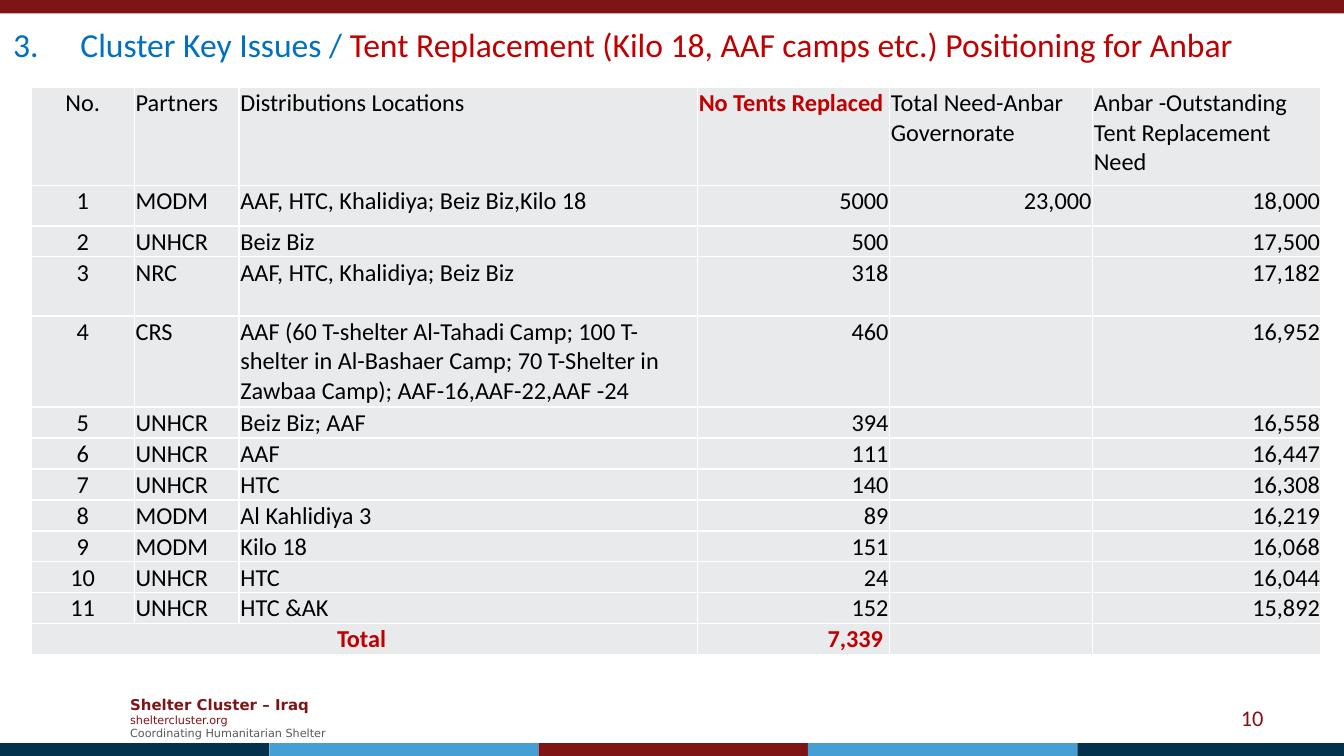
import lxml.etree
import pptx
import pptx.dml.color
import pptx.enum.shapes
import pptx.enum.text
import pptx.oxml
import pptx.oxml.ns
import pptx.util

Inches = pptx.util.Inches
RGBColor = pptx.dml.color.RGBColor
ALIGN = pptx.enum.text.PP_ALIGN
MIDDLE = pptx.enum.text.MSO_ANCHOR.MIDDLE
qn = pptx.oxml.ns.qn

MAROON = RGBColor(0x7F, 0x14, 0x16)
NAVY = RGBColor(0x04, 0x31, 0x4C)
SKY = RGBColor(0x45, 0x9F, 0xD5)
BLUE = RGBColor(0x00, 0x70, 0xC0)
RED = RGBColor(0xC0, 0x00, 0x00)
BLACK = RGBColor(0x00, 0x00, 0x00)
GREY = RGBColor(0x59, 0x59, 0x59)
CELL_GREY = RGBColor(0xE8, 0xEA, 0xEB)
WHITE = RGBColor(0xFF, 0xFF, 0xFF)

BODY_FONT = "Calibri"
FOOTER_FONT = "DejaVu Sans"
CELL_SIZE = 13

HEADERS = ["No.", "Partners", "Distributions Locations", "No Tents Replaced",
           "Total Need-Anbar Governorate", "Anbar -Outstanding Tent Replacement Need"]
DISTRIBUTIONS = [
    ("MODM", "AAF, HTC, Khalidiya; Beiz Biz,Kilo 18", "5000", "23,000", "18,000"),
    ("UNHCR", "Beiz Biz", "500", "", "17,500"),
    ("NRC", "AAF, HTC, Khalidiya; Beiz Biz", "318", "", "17,182"),
    ("CRS", "AAF (60 T-shelter Al-Tahadi Camp; 100 T-shelter in Al-Bashaer Camp; "
            "70 T-Shelter in Zawbaa Camp); AAF-16,AAF-22,AAF -24", "460", "", "16,952"),
    ("UNHCR", "Beiz Biz; AAF", "394", "", "16,558"),
    ("UNHCR", "AAF", "111", "", "16,447"),
    ("UNHCR", "HTC", "140", "", "16,308"),
    ("MODM", "Al Kahlidiya 3", "89", "", "16,219"),
    ("MODM", "Kilo 18", "151", "", "16,068"),
    ("UNHCR", "HTC", "24", "", "16,044"),
    ("UNHCR", "HTC &AK", "152", "", "15,892"),
]
TOTALS = ["Total ", "", "", "7,339 ", "", ""]
COLUMN_WIDTHS = [0.77, 0.78, 3.41, 1.43, 1.51, 1.7]
ROW_HEIGHTS = [0.73, 0.3, 0.23, 0.44, 0.68] + [0.23] * 8


def add_span(para, text, *, size, color, font=BODY_FONT, bold=False):
    """Append formatted text to a paragraph."""
    span = para.add_run()
    span.text = text
    span.font.name = font
    span.font.size = pptx.util.Pt(size)
    span.font.bold = bold
    span.font.color.rgb = color


def add_text_box(page, left, top, width, height):
    """Add a wrapping, vertically centred text box and return its frame."""
    box = page.shapes.add_textbox(Inches(left), Inches(top), Inches(width), Inches(height))
    box.text_frame.word_wrap = True
    box.text_frame.vertical_anchor = MIDDLE
    return box.text_frame


def add_bar(page, left, top, width, height, color):
    """Add a plain coloured bar."""
    bar = page.shapes.add_shape(pptx.enum.shapes.MSO_SHAPE.RECTANGLE,
                                Inches(left), Inches(top), Inches(width), Inches(height))
    bar.shadow.inherit = False
    bar.fill.solid()
    bar.fill.fore_color.rgb = color
    bar.line.fill.background()


def add_stripe(page, left, top, width, height):
    """Add the row of five coloured bars along the bottom edge."""
    colors = [NAVY, SKY, MAROON, SKY, NAVY]
    step = width / len(colors)
    for index, color in enumerate(colors):
        add_bar(page, left + index * step, top, step, height, color)


def add_title(page, left, top, width, height):
    """Add the numbered two-colour title."""
    para = add_text_box(page, left, top, width, height).paragraphs[0]
    properties = para._p.get_or_add_pPr()
    properties.set("marL", str(Inches(0.5)))
    properties.set("indent", str(Inches(-0.5)))
    lxml.etree.SubElement(properties, qn("a:buFont"), typeface="+mj-lt")
    lxml.etree.SubElement(properties, qn("a:buAutoNum"), type="arabicPeriod", startAt="3")
    add_span(para, "Cluster Key Issues / ", size=18, color=BLUE)
    add_span(para, "Tent Replacement (Kilo 18, AAF camps etc.) Positioning for Anbar",
             size=18, color=RED)


def add_footer(page, left, top, width, height):
    """Add the three-line cluster signature."""
    frame = add_text_box(page, left, top, width, height)
    lines = [("Shelter Cluster – Iraq", 8, MAROON, True),
             ("sheltercluster.org", 6, MAROON, False),
             ("Coordinating Humanitarian Shelter", 6, GREY, False)]
    for index, (text, size, color, bold) in enumerate(lines):
        para = frame.add_paragraph() if index else frame.paragraphs[0]
        add_span(para, text, size=size, color=color, font=FOOTER_FONT, bold=bold)


def add_page_number(page, left, top, width, height):
    """Add the right-aligned page number."""
    para = add_text_box(page, left, top, width, height).paragraphs[0]
    para.alignment = ALIGN.RIGHT
    add_span(para, "10", size=12, color=MAROON)


def set_borders(cell):
    """Draw thin white borders on all sides of a cell."""
    properties = cell._tc.get_or_add_tcPr()
    for index, side in enumerate(["lnL", "lnR", "lnT", "lnB"]):
        line = lxml.etree.Element(qn(f"a:{side}"), w=str(pptx.util.Pt(1)))
        fill = lxml.etree.SubElement(line, qn("a:solidFill"))
        lxml.etree.SubElement(fill, qn("a:srgbClr"), val=str(WHITE))
        properties.insert(index, line)


def fill_cell(cell, text, *, align, color=BLACK, bold=False):
    """Format a table cell and write its text."""
    cell.margin_left = cell.margin_top = cell.margin_right = Inches(0.01)
    cell.margin_bottom = 0
    cell.fill.solid()
    cell.fill.fore_color.rgb = CELL_GREY
    set_borders(cell)
    para = cell.text_frame.paragraphs[0]
    para.alignment = align
    if text:
        add_span(para, text, size=CELL_SIZE, color=color, bold=bold)
    else:
        lxml.etree.SubElement(para._p, qn("a:endParaRPr"), sz=str(CELL_SIZE * 100))


def add_tent_table(page, left, top, width, height):
    """Add the table of tents replaced by each partner."""
    numbered = [(str(number), *row) for number, row in enumerate(DISTRIBUTIONS, 1)]
    rows = [HEADERS, *numbered, TOTALS]
    last = len(rows) - 1
    table = page.shapes.add_table(len(rows), len(HEADERS), Inches(left), Inches(top),
                                  Inches(width), Inches(height)).table
    for column, size in zip(table.columns, COLUMN_WIDTHS):
        column.width = Inches(size)
    for row, size in zip(table.rows, ROW_HEIGHTS):
        row.height = Inches(size)
    for row_index, row in enumerate(rows):
        for column_index, text in enumerate(row):
            if column_index == 0:
                align = ALIGN.CENTER
            elif column_index < 3 or row_index == 0:
                align = ALIGN.LEFT
            else:
                align = ALIGN.RIGHT
            strong = row_index == last or (row_index == 0 and column_index == 3)
            fill_cell(table.cell(row_index, column_index), text, align=align,
                      color=RED if strong else BLACK, bold=strong)
    table.cell(last, 0).merge(table.cell(last, 2))


def main():
    """Build the slide and save the deck."""
    deck = pptx.Presentation()
    deck.slide_width = Inches(10)
    deck.slide_height = Inches(10 * 9 / 16)
    page = deck.slides.add_slide(deck.slide_layouts[6])
    add_footer(page, 0.87, 5.12, 1.73, 0.44)
    add_bar(page, 0, 0, 10, 0.1, MAROON)
    add_stripe(page, 0, 5.53, 10.02, 0.1)
    add_page_number(page, 7.17, 5.19, 2.33, 0.3)
    add_tent_table(page, 0.23, 0.65, 9.6, 4.23)
    add_title(page, 0, 0.1, 10, 0.46)
    deck.save("out.pptx")


if __name__ == "__main__":
    main()
